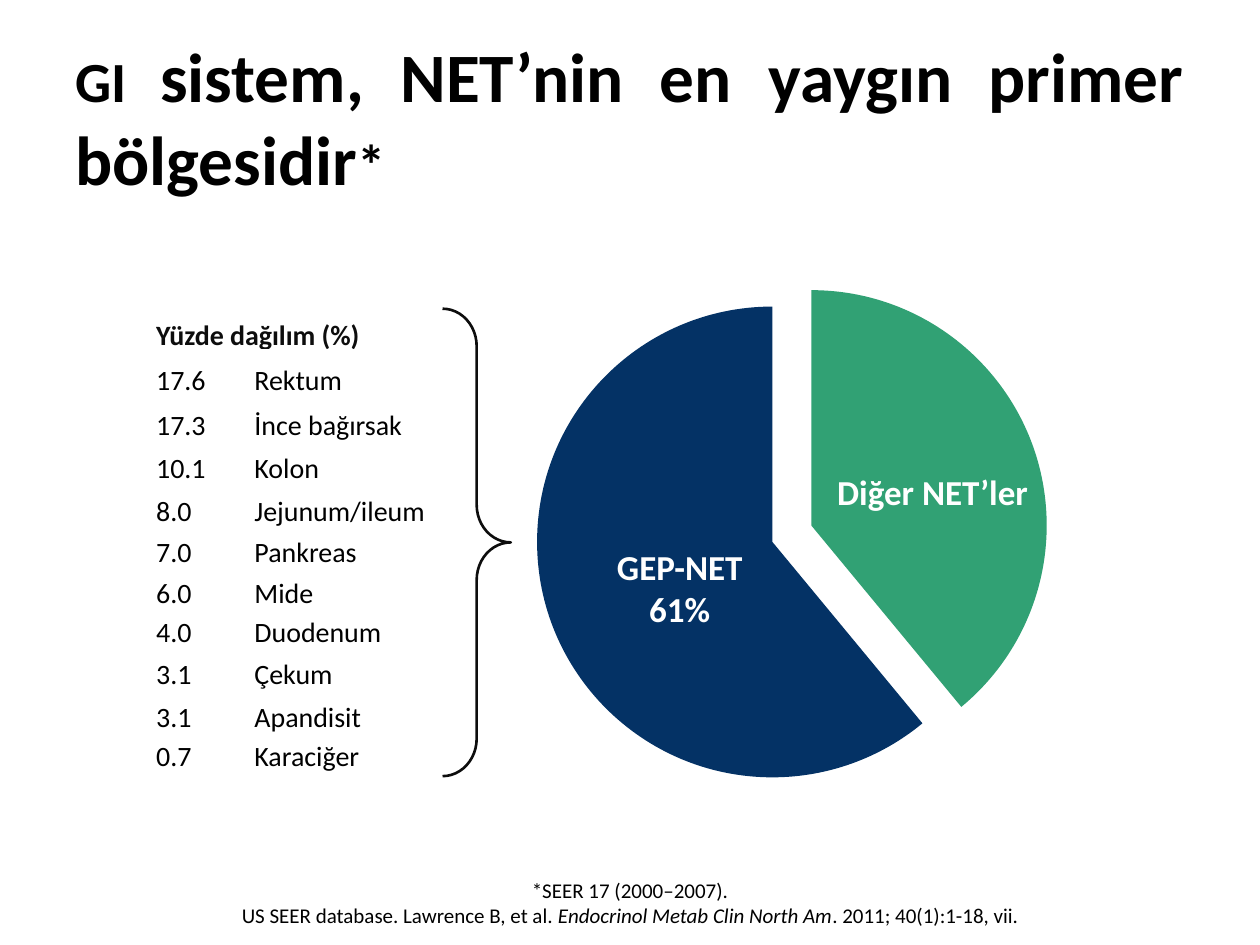
from math import cos, radians, sin, tan

from lxml import etree
from pptx import Presentation
from pptx.dml.color import RGBColor
from pptx.enum.shapes import MSO_SHAPE
from pptx.enum.text import MSO_ANCHOR, PP_ALIGN
from pptx.oxml.ns import qn
from pptx.util import Pt

BLANK_LAYOUT = 6
RIGHT_BRACE = MSO_SHAPE.RIGHT_BRACE
CENTER, JUSTIFY = PP_ALIGN.CENTER, PP_ALIGN.JUSTIFY
MIDDLE, BOTTOM, TOP = MSO_ANCHOR.MIDDLE, MSO_ANCHOR.BOTTOM, MSO_ANCHOR.TOP
FONT = "Calibri"
BLACK, INK, WHITE, NAVY, GREEN = "000000", "0D0D0D", "FFFFFF", "043265", "31A174"


def color(hex_string):
    return RGBColor.from_string(hex_string)


def add_text(shapes, box, runs, alignment, hex_string, bold, anchor, wrap):
    """Add a one-paragraph text box from (text, size, italic) runs; \\n breaks a line."""
    frame = shapes.add_textbox(*map(Pt, box)).text_frame
    frame.word_wrap = wrap
    frame.vertical_anchor = anchor
    paragraph = frame.paragraphs[0]
    paragraph.alignment = alignment
    for text, size, italic in runs:
        for index, line in enumerate(text.split("\n")):
            if index:
                paragraph.add_line_break()
            run = paragraph.add_run()
            run.text = line
            run.font.name = FONT
            run.font.size = Pt(size)
            run.font.bold = bold
            run.font.italic = italic
            run.font.color.rgb = color(hex_string)


presentation = Presentation()
presentation.slide_width, presentation.slide_height = Pt(720), Pt(540)
slide = presentation.slides.add_slide(presentation.slide_layouts[BLANK_LAYOUT])

# Title
title = [("GI ", 32.4, False),
         ("sistem, NET’nin en yaygın primer bölgesidir", 39.6, False),
         ("*", 32.4, False)]
add_text(slide.shapes, (36, 21.6, 648, 90), title, JUSTIFY, BLACK, True, MIDDLE, True)

# Distribution table
rows = [
    ("Yüzde dağılım (%)", "", 30.9),
    ("17.6", "Rektum", 25.9),
    ("17.3", "İnce bağırsak", 25.9),
    ("10.1", "Kolon", 24.5),
    ("8.0", "Jejunum/ileum", 24.5),
    ("7.0", "Pankreas", 23.8),
    ("6.0", "Mide", 23),
    ("4.0", "Duodenum", 22.4),
    ("3.1", "Çekum", 23.9),
    ("3.1", "Apandisit", 25.1),
    ("0.7", "Karaciğer", 22.3),
]
table_height = sum(row[2] for row in rows)
table = slide.shapes.add_table(
    len(rows), 2, Pt(88.5), Pt(169.7), Pt(181.5), Pt(table_height)).table
table.first_row = table.horz_banding = False
table.columns[0].width, table.columns[1].width = Pt(56.2), Pt(125.3)
table.cell(0, 0).merge(table.cell(0, 1))
for row_index, (share, site, height) in enumerate(rows):
    table.rows[row_index].height = Pt(height)
    is_header = row_index == 0
    for column_index, text in enumerate((share, site)):
        cell = table.cell(row_index, column_index)
        cell.fill.background()
        cell.vertical_anchor = BOTTOM
        cell.margin_left = cell.margin_right = cell.margin_top = Pt(0.75)
        cell.margin_bottom = 0
        properties = cell._tc.get_or_add_tcPr()
        for position, side in enumerate(("lnL", "lnR", "lnT", "lnB")):
            width = 3 if is_header and side == "lnB" else 1
            border = etree.Element(qn(f"a:{side}"), w=str(Pt(width)))
            border_fill = etree.SubElement(border, qn("a:solidFill"))
            etree.SubElement(border_fill, qn("a:srgbClr"), val=WHITE)
            properties.insert(position, border)
        if is_header and column_index:
            continue
        paragraph = cell.text_frame.paragraphs[0]
        paragraph.text = text
        paragraph.line_spacing = 0.8 if is_header else 0.9
        font = paragraph.runs[0].font
        font.name, font.size, font.bold = FONT, Pt(16), is_header
        font.color.rgb = color(INK if is_header else BLACK)

# Exploded pie: centre and angles of the arc ends, clockwise from three o'clock
RADIUS = 134.5
BOUNDARY = -90 + 0.39 * 360
pie = slide.shapes.add_group_shape()
slices = [
    (441.4, 309.7, (BOUNDARY, 90, 180, 270), NAVY),
    (463.6, 300.3, (-90, 0, BOUNDARY), GREEN),
]
for center_x, center_y, angles, fill in slices:
    turns = [radians(angle) for angle in angles]
    arc_ends = [(Pt(center_x + RADIUS * cos(turn)), Pt(center_y + RADIUS * sin(turn)))
                for turn in turns]
    builder = pie.shapes.build_freeform(Pt(center_x), Pt(center_y), scale=1.0)
    builder.add_line_segments(arc_ends, close=True)
    pie_slice = builder.convert_to_shape()
    pie_slice.shadow.inherit = False
    pie_slice.fill.solid()
    pie_slice.fill.fore_color.rgb = color(fill)
    pie_slice.line.fill.background()
    # Turn the straight segments between arc ends into Bezier arcs
    segments = list(pie_slice._element.iter(qn("a:lnTo")))[1:len(turns)]
    for segment, start, end in zip(segments, turns, turns[1:]):
        reach = 4 / 3 * tan((end - start) / 4)
        segment.tag = qn("a:cubicBezTo")
        for index, (turn, pull) in enumerate(((start, reach), (end, -reach))):
            x = Pt(center_x + RADIUS * (cos(turn) - pull * sin(turn))) - pie_slice.left
            y = Pt(center_y + RADIUS * (sin(turn) + pull * cos(turn))) - pie_slice.top
            control = etree.Element(qn("a:pt"), x=str(x), y=str(y))
            segment.insert(index, control)

labels = [
    ((344.2, 308.2, 88.5, 55.5), "GEP-NET\n61%"),
    ((470.7, 265.4, 124.5, 31.5), "Diğer NET’ler"),
]
for box, text in labels:
    add_text(pie.shapes, box, [(text, 20, False)], CENTER, WHITE, True, TOP, False)

# Brace joining the table to the pie
brace = slide.shapes.add_shape(RIGHT_BRACE, Pt(252.9), Pt(176.4), Pt(39), Pt(267.1))
brace.adjustments[0], brace.adjustments[1] = 0.55, 0.5
brace.shadow.inherit = False
brace.fill.background()
brace.line.color.rgb = color(INK)
brace.line.width = Pt(1.5)

# Source note
source_note = [
    ("*SEER 17 (2000–2007).\nUS SEER database. Lawrence B, et al", 12, False),
    (". Endocrinol Metab Clin North Am", 12, True),
    (". 2011; 40(1):1-18, vii.", 12, False),
]
add_text(slide.shapes, (36.7, 502.6, 646.6, 26.6), source_note, CENTER, BLACK, False,
         MIDDLE, True)

presentation.save("out.pptx")
